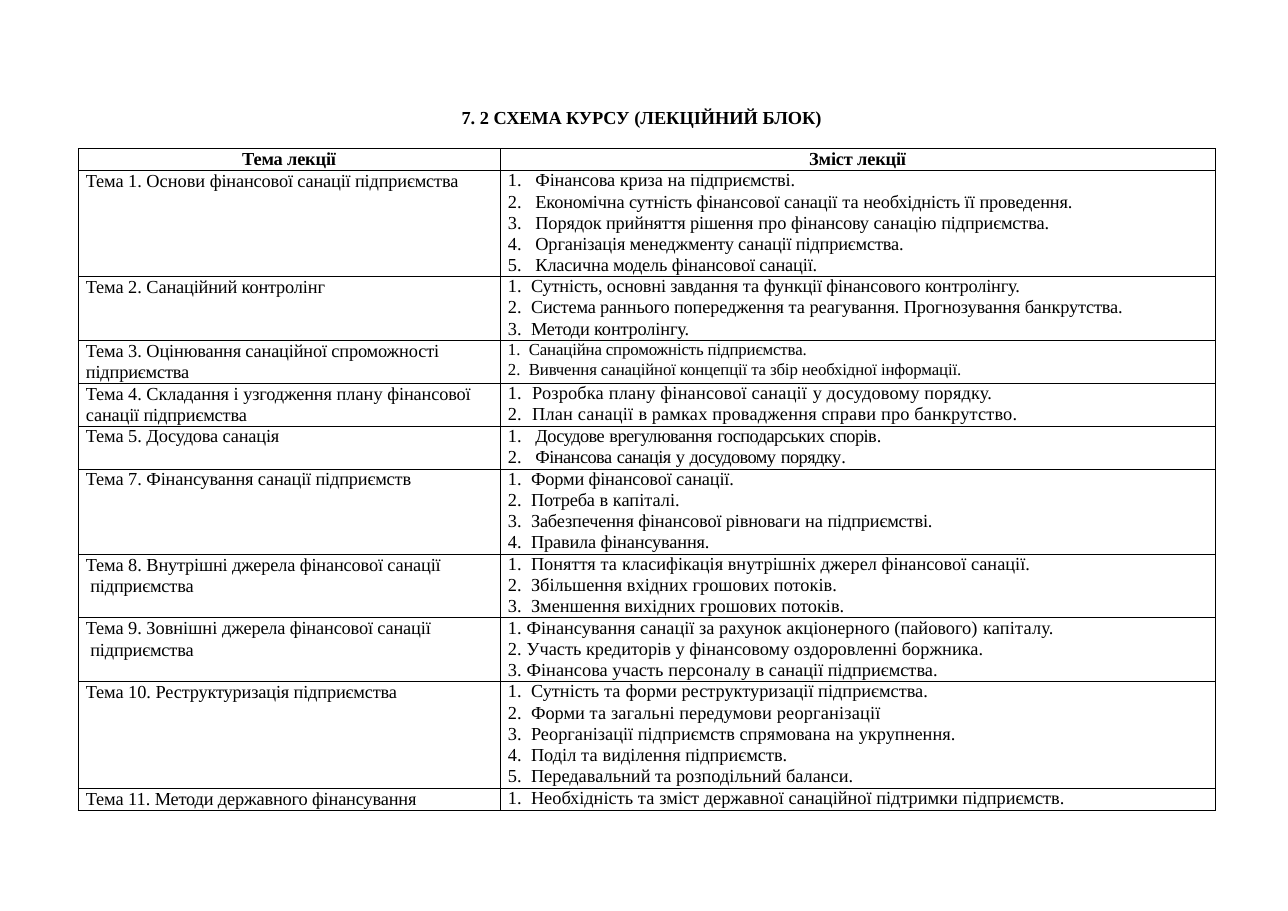
from dataclasses import dataclass
from itertools import cycle

from lxml.etree import SubElement as Sub
from pptx import Presentation as Deck
from pptx.dml.color import RGBColor as Rgb
from pptx.enum.text import PP_ALIGN as Align
from pptx.oxml.ns import qn
from pptx.util import Emu, Pt

BLACK = Rgb(0, 0, 0)
FACE = "Times New Roman"
SCALE = 9144  # 100 px to the inch

# Letter gaps, in hundredths of a point, taken in turn by the runs of a line
TIGHT = (-10, 0)
DENSE = (-37, 0)
LOOSE = (0, 10)
WIDE = (10, 0)


@dataclass(frozen=True)
class Topic:
    """A table row: "|" parts runs, a newline breaks the line."""
    name: str
    items: tuple[str, ...]
    high: int
    hang: int = 21
    gaps: tuple[int, int] = TIGHT
    size: int = 12


TITLE = "7. 2 |СХЕМА КУРСУ |(ЛЕКЦІЙНИЙ БЛОК)"
HEADS = ("Тема лекції", "Зміст лекції")
TOPICS = (
    Topic("Тема |1. Основи| фінансової санації підприємства", (
        "Фінансова |криза на |підприємстві.",
        "Економічна сутність фінансової санації |та |необхідність |її |проведення.",
        "Порядок прийняття рішення| про |фінансову |санацію |підприємства.",
        "Організація менеджменту санації підприємства.",
        "Класична модель фінансової санації."), 96, 25),
    Topic("Тема |2. |Санаційний контролінг", (
        "Сутність, основні завдання |та |функції фінансового контролінгу.",
        "Система раннього попередження |та |реагування. Прогнозування банкрутства.",
        "Методи контролінгу."), 58),
    Topic("Тема |3. |Оцінювання санаційної спроможності\nпідприємства", (
        "Санаційна спроможність підприємства.",
        "Вивчення санаційної концепції та збір необхідної інформації."),
        39, 19, size=11),
    Topic("Тема |4. |Складання| і |узгодження| плану |фінансової\nсанації підприємства", (
        "Розробка плану фінансової санації |у |досудовому порядку.",
        "План санації |в |рамках провадження справи про банкрутство."),
        39, 22, WIDE),
    Topic("Тема |5. |Досудова санація", (
        "Досудове| |врегулювання| |господарських| |спорів|.",
        "Фінансова| |санація| у |досудовому| |порядку|."), 39, 25, DENSE),
    Topic("Тема |7. |Фінансування санації підприємств", (
        "Форми фінансової санації.",
        "Потреба |в капіталі.",
        "Забезпечення фінансової рівноваги| на| підприємстві.",
        "Правила фінансування."), 77),
    Topic("Тема |8. |Внутрішні джерела фінансової санації\n підприємства", (
        "Поняття |та |класифікація внутрішніх джерел фінансової санації.",
        "Збільшення вхідних грошових потоків.",
        "Зменшення вихідних грошових потоків."), 58, gaps=LOOSE),
    Topic("Тема |9. Зовнішні |джерела фінансової санації\n підприємства", (
        "Фінансування санації за рахунок акціонерного (пайового) |капіталу.",
        "Участь кредиторів у фінансовому оздоровленні боржника.",
        "Фінансова участь| персоналу |в санації підприємства."), 58, 17, LOOSE),
    Topic("Тема |10. |Реструктуризація підприємства", (
        "Сутність |та |форми реструктуризації підприємства.",
        "Форми |та |загальні передумови| реорганізації",
        "Реорганізації підприємств спрямована |на |укрупнення.",
        "Поділ |та |виділення підприємств.",
        "Передавальний та розподільний баланси."), 97, gaps=LOOSE),
    Topic("Тема |11.| Методи державного фінансування", (
        "Необхідність |та |зміст державної санаційної підтримки підприємств.",),
        20, gaps=LOOSE),
)


def px(count: int) -> Emu:
    return Emu(count * SCALE)


def write(para, text: str, gaps=TIGHT, size: int = 12, bold: bool = False) -> None:
    """Add the runs of one paragraph."""
    for part, gap in zip(text.split("|"), cycle(gaps)):
        for step, piece in enumerate(part.split("\n")):
            if step:
                para.add_line_break()
            run = para.add_run()
            run.text = piece
            font = run.font
            font.name, font.size, font.bold = FACE, Pt(size), bold
            font.color.rgb = BLACK
            font._element.set("spc", str(gap))


def indent(para, left: int, first: int = 0) -> None:
    props = para._p.get_or_add_pPr()
    props.set("marL", str(px(left)))
    props.set("indent", str(px(first)))


def frame(cell) -> None:
    """Give a cell thin black borders, no fill and no margins."""
    props = cell._tc.get_or_add_tcPr()
    for side in ("lnL", "lnR", "lnT", "lnB"):
        line = Sub(props, qn(f"a:{side}"), w=str(Pt(0.5)))
        Sub(Sub(line, qn("a:solidFill")), qn("a:srgbClr"), val=str(BLACK))
    cell.fill.background()
    cell.margin_left = cell.margin_right = cell.margin_top = cell.margin_bottom = 0


def fill_list(cell, topic: Topic) -> None:
    """Write the numbered points of a topic."""
    last = len(topic.items) - 1
    for rank, item in enumerate(topic.items):
        para = cell.text_frame.add_paragraph() if rank else cell.text_frame.paragraphs[0]
        indent(para, 7 + topic.hang, -topic.hang)
        Sub(para._p.pPr, qn("a:buAutoNum"), type="arabicPeriod")
        lead = 13.2 if rank == 0 else 13.9 if rank == last else 13.8
        para.line_spacing = Pt(lead - (12 - topic.size))
        write(para, item, topic.gaps, topic.size)


def add_title(slide) -> None:
    body = slide.shapes.add_textbox(px(418), px(95), px(333), px(23)).text_frame
    body.word_wrap = True
    body.margin_left = body.margin_right = body.margin_bottom = 0
    body.margin_top = px(1)
    para = body.paragraphs[0]
    indent(para, 1)
    write(para, TITLE, (0, -10), bold=True)


def add_grid(slide) -> None:
    highs = [20] + [topic.high for topic in TOPICS]
    grid = slide.shapes.add_table(
        len(highs), 2, px(71), px(135), px(1032), px(sum(highs))).table
    grid.first_row = grid.horz_banding = False
    for col, wide in zip(grid.columns, (383, 649)):
        col.width = px(wide)
    for row, high in zip(grid.rows, highs):
        row.height = px(high)
    for cell in grid.iter_cells():
        frame(cell)

    # Header row
    for col, head in enumerate(HEADS):
        para = grid.cell(0, col).text_frame.paragraphs[0]
        para.alignment = Align.CENTER
        para.line_spacing = Pt(13.3)
        write(para, head, bold=True)

    # Topic rows
    for row, topic in enumerate(TOPICS, 1):
        para = grid.cell(row, 0).text_frame.paragraphs[0]
        indent(para, 7)
        para.line_spacing = Pt(13.8 if "\n" in topic.name else 13.5)
        write(para, topic.name)
        fill_list(grid.cell(row, 1), topic)


def main() -> None:
    deck = Deck()
    deck.slide_width, deck.slide_height = px(1169), px(827)
    slide = deck.slides.add_slide(deck.slide_layouts[6])
    add_title(slide)
    add_grid(slide)
    deck.save("out.pptx")


if __name__ == "__main__":
    main()
